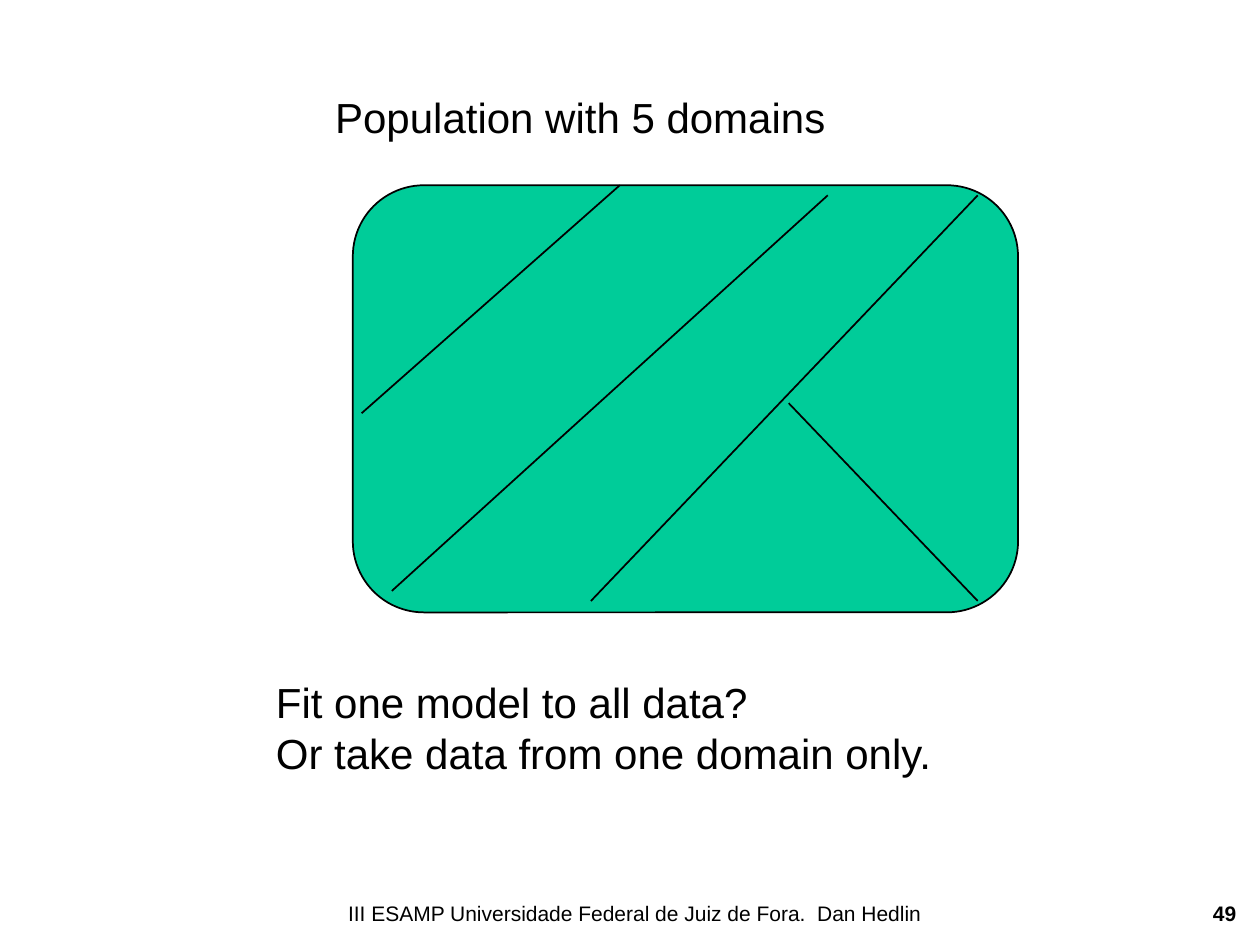
from dataclasses import dataclass

from lxml import etree
from pptx import Presentation
from pptx.dml.color import RGBColor
from pptx.enum.shapes import MSO_CONNECTOR, MSO_SHAPE
from pptx.enum.text import MSO_ANCHOR, MSO_AUTO_SIZE, PP_ALIGN
from pptx.oxml.ns import qn
from pptx.util import Inches, Pt

ROUNDED = MSO_SHAPE.ROUNDED_RECTANGLE
STRAIGHT = MSO_CONNECTOR.STRAIGHT
TOP, MIDDLE = MSO_ANCHOR.TOP, MSO_ANCHOR.MIDDLE
LEFT, CENTER, RIGHT = PP_ALIGN.LEFT, PP_ALIGN.CENTER, PP_ALIGN.RIGHT
NO_AUTOFIT = MSO_AUTO_SIZE.NONE


@dataclass(frozen=True)
class Theme:
    """Colours, font and sizes of the deck."""
    font: str = "Arial"
    ink: RGBColor = RGBColor(0x00, 0x00, 0x00)
    population: RGBColor = RGBColor(0x00, 0xCC, 0x99)
    text_size: Pt = Pt(24)
    footer_size: Pt = Pt(12)
    line_width: Pt = Pt(1)


@dataclass(frozen=True)
class Box:
    """A region of the page in inches."""
    left: float
    top: float
    width: float
    height: float

    def lengths(self):
        """Return the region as four lengths."""
        return [Inches(n) for n in (self.left, self.top, self.width, self.height)]

    def point(self, across, down):
        """Return the point at an offset from the top left corner."""
        return Inches(self.left + across), Inches(self.top + down)


THEME = Theme()
DOMAIN_BORDERS = [
    ((2.12, 0), (0.07, 1.81)),
    ((3.77, 0.08), (0.31, 3.22)),
    ((4.96, 0.08), (1.89, 3.3)),
    ((3.46, 1.73), (4.96, 3.3)),
]


def write_text(shape, lines, size, align=LEFT, anchor=TOP, bold=False, wrap=True):
    """Fill a shape with evenly styled paragraphs."""
    frame = shape.text_frame
    frame.text = "\n".join(lines)
    frame.word_wrap = wrap
    frame.auto_size = NO_AUTOFIT
    frame.vertical_anchor = anchor
    for para in frame.paragraphs:
        para.alignment = align
        para.space_before = Pt(0)
        para.font.name = THEME.font
        para.font.size = size
        para.font.bold = bold
        para.font.color.rgb = THEME.ink


def fill_placeholder(placeholder, box, lines):
    """Move a placeholder to its box and write plain lines without bullets."""
    placeholder.left, placeholder.top, placeholder.width, placeholder.height = box.lengths()
    write_text(placeholder, lines, THEME.text_size)
    for para in placeholder.text_frame.paragraphs:
        properties = para._p.get_or_add_pPr()
        properties.set("marL", "0")
        properties.set("indent", "0")
        etree.SubElement(properties, qn("a:buNone"))


def add_population(page, box):
    """Draw the population and the borders between its domains as one group."""
    shapes = page.shapes.add_group_shape().shapes
    population = shapes.add_shape(ROUNDED, *box.lengths())
    population.shadow.inherit = False
    population.fill.solid()
    population.fill.fore_color.rgb = THEME.population
    borders = [
        shapes.add_connector(STRAIGHT, *box.point(*start), *box.point(*end))
        for start, end in DOMAIN_BORDERS
    ]
    for outlined in [population, *borders]:
        outlined.line.color.rgb = THEME.ink
        outlined.line.width = THEME.line_width
    for border in borders:
        etree.SubElement(border._element.spPr, qn("a:effectLst"))


def add_footer(page, box, text, align, bold=False):
    """Add one footer text in its box."""
    footer = page.shapes.add_textbox(*box.lengths())
    write_text(footer, [text], THEME.footer_size, align, MIDDLE, bold, wrap=False)


def build_domains_page(deck):
    """Build the page about a population with five domains."""
    page = deck.slides.add_slide(deck.slide_layouts[1])
    title, body = page.placeholders
    add_footer(page, Box(2.33, 7, 5.42, 0.5),
               "III ESAMP Universidade Federal de Juiz de Fora.  Dan Hedlin", CENTER)
    add_footer(page, Box(7.83, 7, 2.08, 0.5), "49", RIGHT, bold=True)
    add_population(page, Box(2.8, 1.47, 5.28, 3.39))
    fill_placeholder(title, Box(2.56, 0.68, 5.51, 0.5), ["Population with 5 domains"])
    fill_placeholder(body, Box(2.09, 5.32, 5.51, 0.91),
                     ["Fit one model to all data?", "Or take data from one domain only."])


def main():
    """Build and save the deck."""
    deck = Presentation()
    deck.slide_width, deck.slide_height = Inches(10), Inches(7.5)
    build_domains_page(deck)
    deck.save("out.pptx")


if __name__ == "__main__":
    main()
